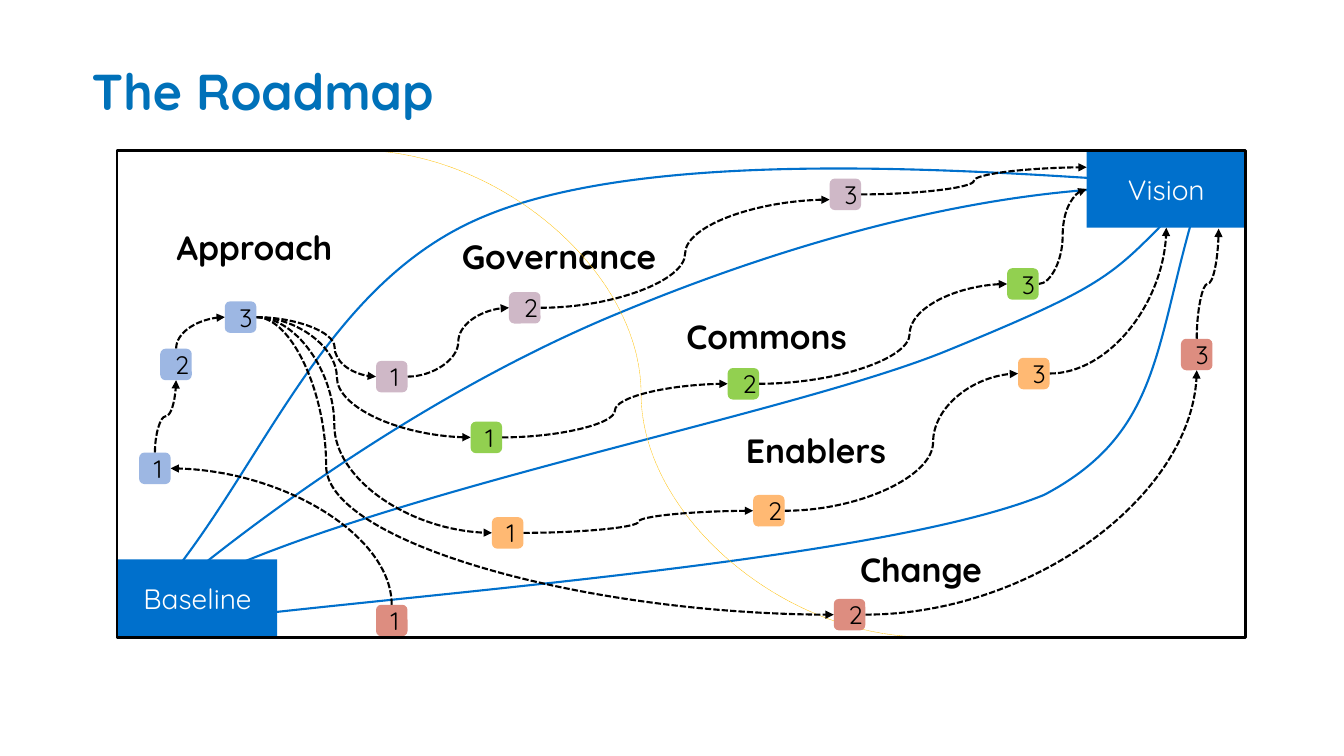
from dataclasses import dataclass

from lxml.etree import SubElement
from pptx import Presentation
from pptx.dml.color import RGBColor
from pptx.enum.dml import MSO_LINE
from pptx.enum.shapes import MSO_CONNECTOR, MSO_SHAPE
from pptx.enum.text import MSO_ANCHOR, PP_ALIGN
from pptx.oxml.ns import qn
from pptx.util import Pt

Point = tuple[float, float]

FONT = "Quicksand"
BLUE, BLACK, WHITE = "0070CC", "000000", "FFFFFF"
CHIP = 22.5


@dataclass
class Box:
    x: float
    y: float
    width: float = CHIP
    height: float = CHIP

    @property
    def left(self) -> Point:
        return self.x, self.y + self.height / 2

    @property
    def right(self) -> Point:
        return self.x + self.width, self.y + self.height / 2

    @property
    def top(self) -> Point:
        return self.x + self.width / 2, self.y

    @property
    def bottom(self) -> Point:
        return self.x + self.width / 2, self.y + self.height


@dataclass
class Track:
    label: str
    label_at: Point
    color: str
    steps: list[Box]


@dataclass
class Route:
    """A curve whose first leg runs sideways, or upwards if it is upright."""
    start: Point
    end: Point
    bend: float = 0.5
    corner: bool = False
    upright: bool = False
    color: str = BLACK
    weight: float = 1.5
    arrow: bool = True


FRAME = Box(83.6, 107.3, 806.2, 348.2)
VISION = Box(776.2, 107.3, 113.8, 55.4)
BASELINE = Box(84.2, 399.6, 113.8, 55.4)

APPROACH = Track("Approach", (69.8, 165.6), "9DB7E3",
                 [Box(99.4, 323.3), Box(114.5, 249.1), Box(160.6, 215.3)])
GOVERNANCE = Track("Governance", (287.3, 172.1), "CFB8C7",
                   [Box(268.6, 257.8), Box(363.6, 208.6), Box(592.6, 127.6)])
COMMONS = Track("Commons", (435.6, 228.6), "92D050",
                [Box(336.2, 301.2), Box(519.8, 262.9), Box(719.4, 191.6)])
ENABLERS = Track("Enablers", (470.9, 310.6), "FFB973",
                 [Box(351.4, 369.4), Box(538, 353.6), Box(727.2, 255.6)])
CHANGE = Track("Change", (545.8, 395.3), "DD8D80",
               [Box(268.6, 432), Box(595.6, 427.8), Box(843.6, 242)])
TRACKS = [APPROACH, GOVERNANCE, COMMONS, ENABLERS, CHANGE]

A1, A2, A3 = APPROACH.steps
G1, G2, G3 = GOVERNANCE.steps
C1, C2, C3 = COMMONS.steps
E1, E2, E3 = ENABLERS.steps
H1, H2, H3 = CHANGE.steps

ROUTES = [
    Route((254.9, 107.3), (661, 455), color="FFC000", weight=0.25, arrow=False),
    Route(H1.top, A1.right, corner=True, upright=True),
    Route(A1.top, A2.bottom, upright=True),
    Route(A2.top, A3.left, corner=True, upright=True),
    Route(A3.right, G1.left, 0.654),
    Route(A3.right, C1.left, 0.376),
    Route(A3.right, E1.left, 0.331),
    Route(A3.right, H2.left, 0.121),
    Route(G1.right, G2.left),
    Route(G2.right, (G3.x, 142.6)),
    Route(G3.right, (VISION.x, 119.5)),
    Route(C1.right, C2.left),
    Route(C2.right, C3.left, 0.607),
    Route(C3.right, VISION.left),
    Route(E1.right, E2.left),
    Route(E2.right, E3.left, 0.636),
    Route(E3.right, VISION.bottom, corner=True),
    Route(H2.right, H3.bottom, corner=True),
    Route(H3.top, (870.5, 163.4), upright=True),
]

# Each boundary: its start, then two handles and a knot for every curve.
BOUNDARIES: list[list[Point]] = [
    [(86.4, 450), (180, 365), (218.2, 206.6), (347, 154.1),
     (475.9, 100.8), (733, 124.6), (858.2, 132.5)],
    [(86.4, 451.4), (222.5, 428.4), (617, 406.1), (745.9, 353.5),
     (833, 307.4), (823.7, 242.6), (858.2, 134.6)],
    [(87.8, 451.4), (182.2, 367.2), (316.1, 275), (445, 222.5),
     (573.8, 169.2), (726.5, 126.7), (860.4, 134.6)],
    [(85.7, 450.7), (179.3, 366.5), (549.4, 303.1), (678.2, 249.8),
     (806.4, 197.3), (793.4, 195.1), (857.5, 133.2)],
]


def rgb(color: str) -> RGBColor:
    return RGBColor.from_string(color)


def write(shape, text: str, size: float, color: str, bold: bool = False,
          align=PP_ALIGN.CENTER, spacing: float = 1.0) -> None:
    shape.text_frame.text = text
    para = shape.text_frame.paragraphs[0]
    para.alignment = align
    para.line_spacing = spacing
    font = para.runs[0].font
    font.name, font.size, font.bold = FONT, Pt(size), bold
    font.color.rgb = rgb(color)


def add_box(page, box: Box, kind=MSO_SHAPE.RECTANGLE, fill: str | None = None):
    shape = page.shapes.add_shape(kind, Pt(box.x), Pt(box.y), Pt(box.width), Pt(box.height))
    shape.shadow.inherit = False
    if fill:
        shape.fill.solid()
        shape.fill.fore_color.rgb = rgb(fill)
        shape.line.fill.background()
    else:
        shape.fill.background()
    shape.text_frame.vertical_anchor = MSO_ANCHOR.MIDDLE
    return shape


def add_step(page, box: Box, number: int, color: str) -> None:
    shape = add_box(page, box, MSO_SHAPE.ROUNDED_RECTANGLE, color)
    frame = shape.text_frame
    frame.margin_left = frame.margin_right = Pt(9.4)
    frame.margin_top = frame.margin_bottom = Pt(5)
    write(shape, str(number), 18, BLACK)


def add_label(page, track: Track) -> None:
    x, y = track.label_at
    box = page.shapes.add_textbox(Pt(x), Pt(y), Pt(224), Pt(49))
    frame = box.text_frame
    frame.word_wrap = True
    frame.margin_left = frame.margin_right = frame.margin_top = frame.margin_bottom = 0
    write(box, track.label, 24, BLACK, bold=True, spacing=0.9)


def add_route(page, route: Route) -> None:
    ends = [route.start, route.end]
    if route.upright:  # turn back by 90 degrees; the rotation below undoes it
        mid_x, mid_y = ((a + b) / 2 for a, b in zip(*ends))
        ends = [(mid_x + y - mid_y, mid_y - x + mid_x) for x, y in ends]
    line = page.shapes.add_connector(
        MSO_CONNECTOR.CURVE, *(Pt(value) for end in ends for value in end))
    line.line.color.rgb = rgb(route.color)
    line.line.width = Pt(route.weight)
    line.line.dash_style = MSO_LINE.SQUARE_DOT
    properties = line.element.spPr
    if route.upright:
        properties.find(qn("a:xfrm")).set("rot", "5400000")
    geometry = properties.find(qn("a:prstGeom"))
    if route.corner:
        geometry.set("prst", "curvedConnector2")
    else:
        SubElement(geometry.find(qn("a:avLst")), qn("a:gd"),
                   name="adj1", fmla=f"val {round(route.bend * 100000)}")
    if route.arrow:
        SubElement(properties.find(qn("a:ln")), qn("a:tailEnd"), type="triangle")
    SubElement(properties, qn("a:effectLst"))


def add_boundary(page, points: list[Point]) -> None:
    """Draw a freeform through the knots, then bend its segments with the handles."""
    points = [(Pt(x), Pt(y)) for x, y in points]
    builder = page.shapes.build_freeform(*points[0])
    builder.add_line_segments(points[3::3], close=False)
    shape = builder.convert_to_shape()
    shape.shadow.inherit = False
    shape.fill.background()
    shape.line.color.rgb = rgb(BLUE)
    shape.line.width = Pt(1.5)
    outline = next(shape.element.iter(qn("a:path")))
    for segment in outline.findall(qn("a:lnTo")):
        outline.remove(segment)
    for first in range(1, len(points), 3):
        curve = SubElement(outline, qn("a:cubicBezTo"))
        for x, y in points[first:first + 3]:
            SubElement(curve, qn("a:pt"), x=str(x - shape.left), y=str(y - shape.top))


def main() -> None:
    deck = Presentation()
    deck.slide_width, deck.slide_height = Pt(960), Pt(540)
    page = deck.slides.add_slide(deck.slide_layouts[5])
    title = page.shapes.title
    title.left, title.top, title.width, title.height = Pt(58.3), Pt(18.7), Pt(835), Pt(72)
    title.text_frame.vertical_anchor = MSO_ANCHOR.BOTTOM
    write(title, "The Roadmap", 36, "0071B9", True, PP_ALIGN.LEFT, 0.9)

    for points in BOUNDARIES:
        add_boundary(page, points)
    for track in TRACKS:
        add_label(page, track)
    for box, text in ((VISION, "Vision"), (BASELINE, "Baseline")):
        write(add_box(page, box, fill=BLUE), text, 20, WHITE)
    for route in ROUTES:
        add_route(page, route)
    for track in TRACKS:
        for number, box in enumerate(track.steps, 1):
            add_step(page, box, number, track.color)
    frame = add_box(page, FRAME)
    frame.line.color.rgb = rgb(BLACK)
    frame.line.width = Pt(2)
    deck.save("out.pptx")


if __name__ == "__main__":
    main()
